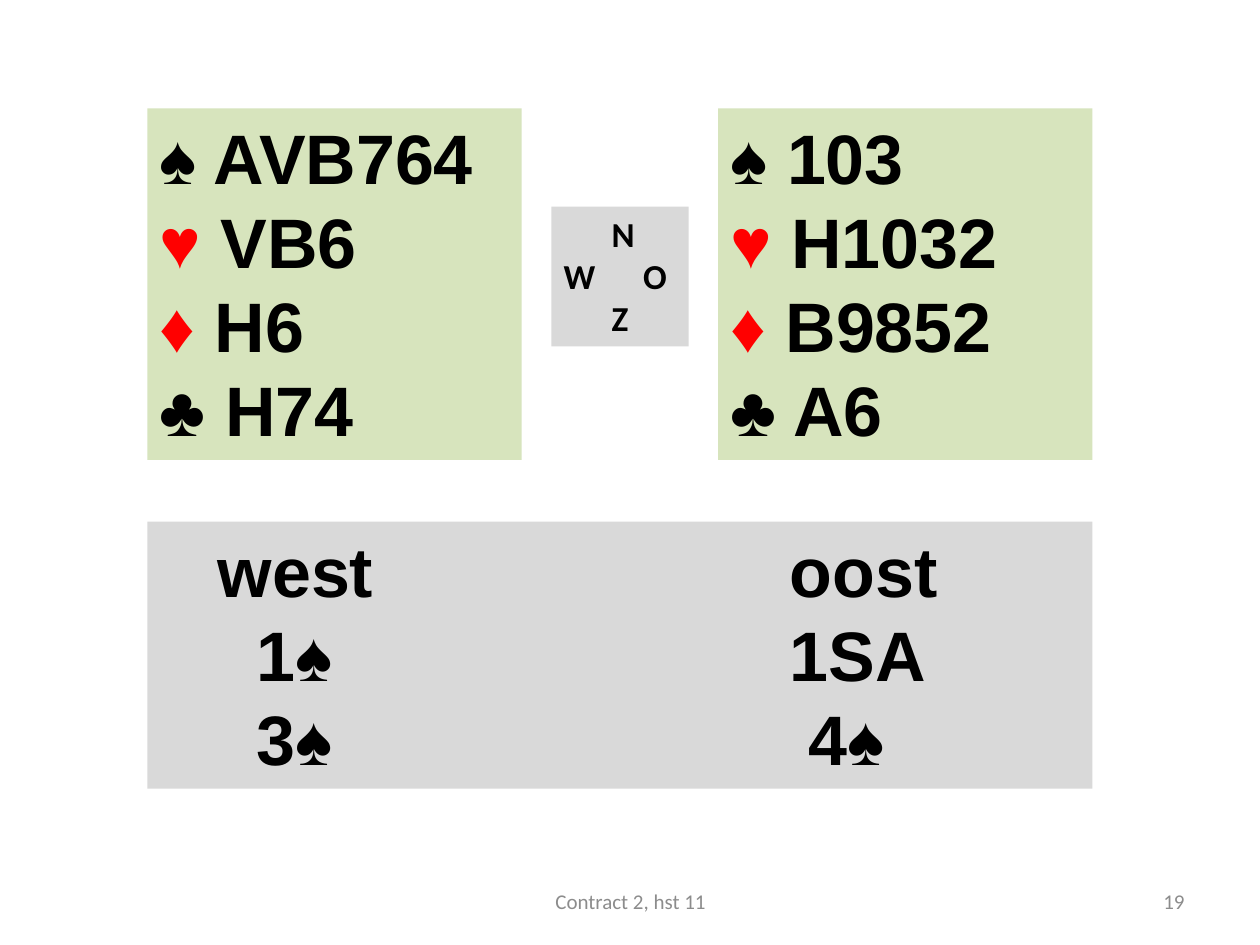
from lxml.etree import SubElement
from pptx import Presentation
from pptx.dml.color import RGBColor
from pptx.enum.shapes import MSO_SHAPE
from pptx.enum.text import MSO_ANCHOR, MSO_AUTO_SIZE, PP_ALIGN
from pptx.oxml.ns import qn
from pptx.util import Inches, Pt

BLACK = RGBColor(0, 0, 0)
RED = RGBColor(0xFF, 0, 0)
GREEN = RGBColor(0xD7, 0xE4, 0xBD)
GREY = RGBColor(0xD9, 0xD9, 0xD9)
FOOTER_GREY = RGBColor(0x8C, 0x8C, 0x8C)

SUITS = [("♠", BLACK), ("♥", RED), ("♦", RED), ("♣", BLACK)]
WEST_HAND = ["AVB764", "VB6", "H6", "H74"]
EAST_HAND = ["103", "H1032", "B9852", "A6"]

# Each row: text, tab stops in inches
COMPASS = [(text, (0.38, 0.63)) for text in ("\tN", "W\t\tO", "\tZ")]
BIDDING = [
    ("\twest\toost", (0.46, 5)),
    ("\t1♠\t1SA", (0.77, 5)),
    ("\t3♠\t4♠", (0.77, 5.15)),
]

LEFT, RIGHT, TOP = 1.17, 8.67, 0.86
HAND_W, HAND_H = 2.97, 2.79
COMPASS_W, COMPASS_H = 1.09, 1.11


def add_run(p, text, size=40, font="Arial", color=BLACK, bold=True):
    r = p.add_run()
    r.text = text
    r.font.size = Pt(size)
    r.font.name = font
    r.font.bold = bold
    r.font.color.rgb = color


def set_tabs(p, stops):
    tabs = SubElement(p._p.get_or_add_pPr(), qn("a:tabLst"))
    for stop in stops:
        SubElement(tabs, qn("a:tab"), pos=str(Inches(stop)), algn="l")


def add_panel(s, x, y, w, h, fill, lines):
    """Add a filled box and return its empty, left-aligned paragraphs."""
    sp = s.shapes.add_shape(MSO_SHAPE.RECTANGLE, Inches(x), Inches(y),
                            Inches(w), Inches(h))
    sp.shadow.inherit = False
    sp.fill.solid()
    sp.fill.fore_color.rgb = fill
    sp.line.fill.background()
    tf = sp.text_frame
    tf.word_wrap = True
    tf.auto_size = MSO_AUTO_SIZE.SHAPE_TO_FIT_TEXT
    tf.vertical_anchor = MSO_ANCHOR.TOP
    for _ in range(lines - 1):
        tf.add_paragraph()
    for p in tf.paragraphs:
        p.alignment = PP_ALIGN.LEFT
    return tf.paragraphs


def add_hand(s, x, cards):
    panel = add_panel(s, x, TOP, HAND_W, HAND_H, GREEN, len(SUITS))
    for p, (suit, color), holding in zip(panel, SUITS, cards):
        add_run(p, suit, color=color)
        add_run(p, f" {holding}")


def add_tabbed(s, x, y, w, h, rows, **style):
    panel = add_panel(s, x, y, w, h, GREY, len(rows))
    for p, (text, stops) in zip(panel, rows):
        set_tabs(p, stops)
        add_run(p, text, **style)


def add_footer(s, x, w, text, align):
    sp = s.shapes.add_textbox(Inches(x), Inches(6.95), Inches(w), Inches(0.4))
    tf = sp.text_frame
    tf.word_wrap = True
    tf.vertical_anchor = MSO_ANCHOR.MIDDLE
    p = tf.paragraphs[0]
    p.alignment = align
    add_run(p, text, size=12, font="Calibri", color=FOOTER_GREY, bold=False)


def main():
    prs = Presentation()
    prs.slide_width, prs.slide_height = Inches(10), Inches(7.5)
    s = prs.slides.add_slide(prs.slide_layouts[6])

    add_hand(s, LEFT, WEST_HAND)
    add_hand(s, RIGHT - HAND_W, EAST_HAND)
    add_tabbed(s, (LEFT + RIGHT - COMPASS_W) / 2, 1.64, COMPASS_W, COMPASS_H,
               COMPASS, size=20, font="Calibri")
    add_tabbed(s, LEFT, 4.14, RIGHT - LEFT, 2.12, BIDDING)
    add_footer(s, 3.42, 3.17, "Contract 2, hst 11", PP_ALIGN.CENTER)
    add_footer(s, 7.17, 2.33, "19", PP_ALIGN.RIGHT)

    prs.save("out.pptx")


if __name__ == "__main__":
    main()
